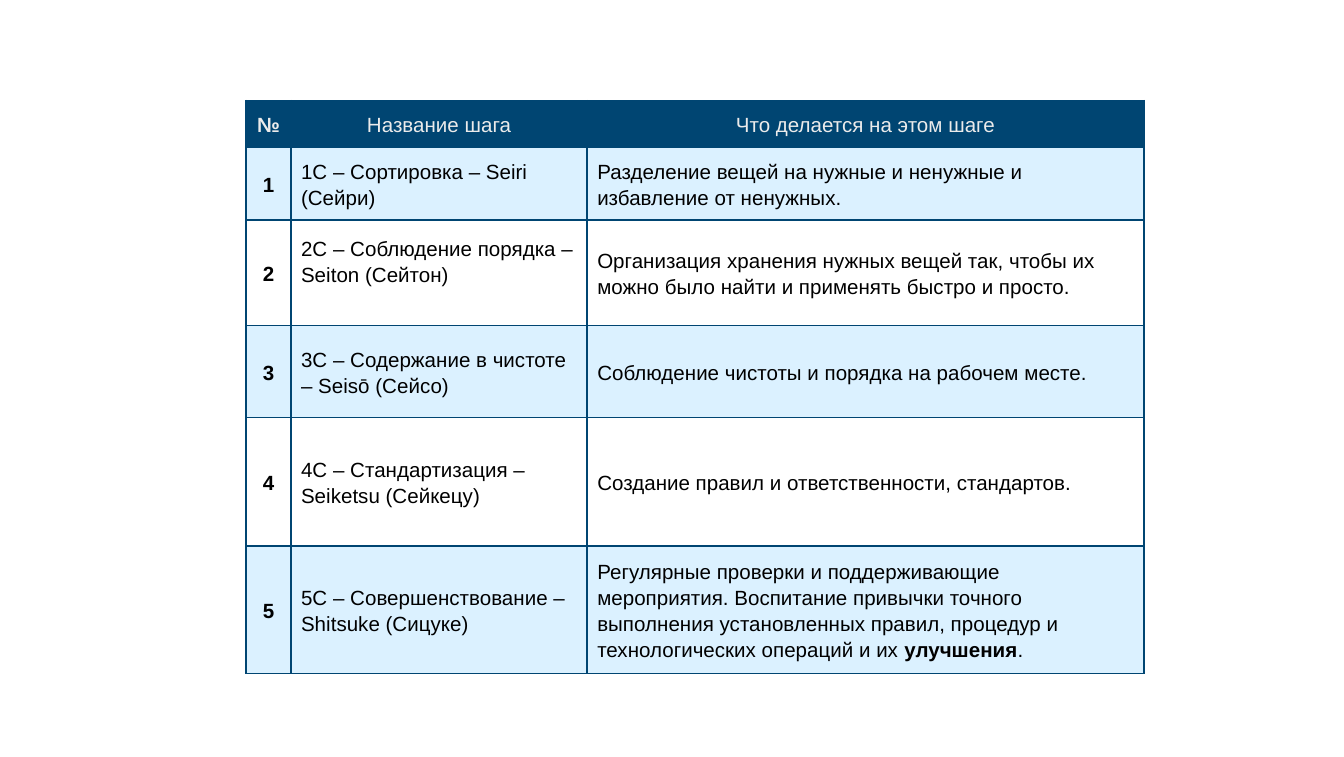
from dataclasses import dataclass

from lxml.etree import SubElement
from pptx import Presentation
from pptx.dml.color import RGBColor
from pptx.enum.text import MSO_ANCHOR as Anchor, PP_ALIGN as Align
from pptx.oxml.ns import qn
from pptx.util import Pt

COLORS = {
    "navy": "004572",
    "pale": "DBF1FF",
    "white": "FFFFFF",
    "light": "EBEBEB",
    "black": "000000",
}
PAGE_WIDTH, PAGE_HEIGHT = 720, 405.36
LEFT, TOP = 131.8, 53.9
COLUMN_WIDTHS = (24.1, 158.7, 298.2)
INSET = 5.4
BORDER_WIDTH = 1


@dataclass
class Step:
    name: str
    action: str
    height: float
    key_word: str = ""
    ending: str = ""
    name_lift: float = 0


@dataclass
class Span:
    text: str
    bold: bool = False


HEADINGS = ("№", "Название шага", "Что делается на этом шаге")
HEADING_HEIGHT = 23
STEPS = (
    Step("1С – Сортировка – Seiri (Сейри)",
         "Разделение вещей на нужные и ненужные и избавление от ненужных.", 36),
    Step("2С – Соблюдение порядка – Seiton (Сейтон)",
         "Организация хранения нужных вещей так, чтобы их можно было найти "
         "и применять быстро и просто.", 56.7, name_lift=13),
    Step("3С – Содержание в чистоте – Seisō (Сейсо)",
         "Соблюдение чистоты и порядка на рабочем месте.", 49.3),
    Step("4С – Стандартизация – Seiketsu (Сейкецу)",
         "Создание правил и ответственности, стандартов.", 68.6),
    Step("5С – Совершенствование – Shitsuke (Сицуке)",
         "Регулярные проверки и поддерживающие мероприятия. Воспитание привычки "
         "точного выполнения установленных правил, процедур и технологических "
         "операций и их ", 68.5, key_word="улучшения", ending="."),
)


def rgb(name: str) -> RGBColor:
    return RGBColor.from_string(COLORS[name])


def set_all(target, values: dict) -> None:
    for name, value in values.items():
        setattr(target, name, value)


def add_borders(cell) -> None:
    properties = cell._tc.get_or_add_tcPr()
    for position, side in enumerate(("a:lnL", "a:lnR", "a:lnT", "a:lnB")):
        line = properties.makeelement(qn(side), {"w": str(int(Pt(BORDER_WIDTH)))})
        fill = SubElement(line, qn("a:solidFill"))
        SubElement(fill, qn("a:srgbClr"), val=COLORS["navy"])
        # Borders must come before the cell fill
        properties.insert(position, line)


def fill_cell(cell, spans: list[Span], fill: str, color: str,
              align: Align, lift: float = 0) -> None:
    set_all(cell, {
        "vertical_anchor": Anchor.MIDDLE,
        "margin_left": Pt(INSET),
        "margin_right": Pt(INSET),
        "margin_top": Pt(INSET),
        "margin_bottom": Pt(INSET + lift),
    })
    cell.fill.solid()
    cell.fill.fore_color.rgb = rgb(fill)
    add_borders(cell)
    para = cell.text_frame.paragraphs[0]
    set_all(para, {"alignment": align, "line_spacing": 1.15})
    for span in spans:
        run = para.add_run()
        run.text = span.text
        set_all(run.font, {"name": "Arial", "size": Pt(11), "bold": span.bold})
        run.font.color.rgb = rgb(color)


def add_step(table, number: int, step: Step) -> None:
    fill = "pale" if number % 2 else "white"
    action = [Span(step.action)]
    if step.key_word:
        action += [Span(step.key_word, True), Span(step.ending)]
    number_cell, name_cell, action_cell = table.rows[number].cells
    fill_cell(number_cell, [Span(str(number), True)], fill, "black", Align.CENTER)
    fill_cell(name_cell, [Span(step.name)], fill, "black", Align.LEFT, step.name_lift)
    fill_cell(action_cell, action, fill, "black", Align.LEFT)


def main() -> None:
    deck = Presentation()
    set_all(deck, {"slide_width": Pt(PAGE_WIDTH), "slide_height": Pt(PAGE_HEIGHT)})
    page = deck.slides.add_slide(deck.slide_layouts[6])

    # Table grid
    heights = [HEADING_HEIGHT] + [step.height for step in STEPS]
    table = page.shapes.add_table(
        len(heights), len(COLUMN_WIDTHS), Pt(LEFT), Pt(TOP),
        Pt(sum(COLUMN_WIDTHS)), Pt(sum(heights))).table
    set_all(table, {"first_row": True, "horz_banding": False})
    for column, width in zip(table.columns, COLUMN_WIDTHS):
        column.width = Pt(width)
    for row, height in zip(table.rows, heights):
        row.height = Pt(height)

    # Heading row
    for cell, heading in zip(table.rows[0].cells, HEADINGS):
        fill_cell(cell, [Span(heading, heading == "№")], "navy", "light", Align.CENTER)

    # The five steps
    for number, step in enumerate(STEPS, start=1):
        add_step(table, number, step)

    deck.save("out.pptx")


if __name__ == "__main__":
    main()
